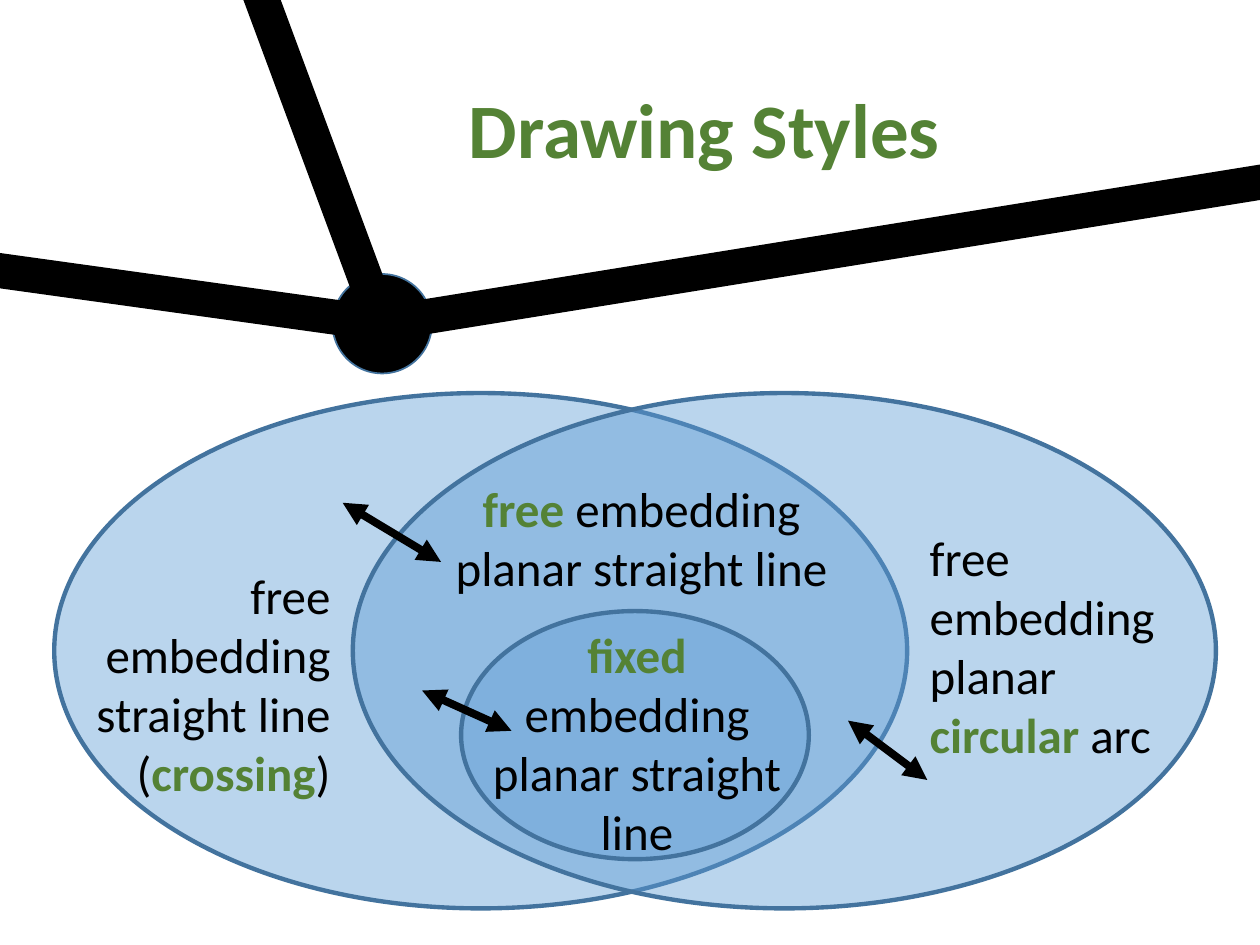
from lxml.etree import SubElement
from pptx import Presentation
from pptx.dml.color import RGBColor
from pptx.enum.shapes import MSO_CONNECTOR, MSO_SHAPE
from pptx.enum.text import MSO_AUTO_SIZE, PP_ALIGN
from pptx.oxml.ns import qn
from pptx.util import Pt

BLUE = RGBColor(0x5B, 0x9B, 0xD5)
OUTLINE = RGBColor(0x43, 0x73, 0x9E)
GREEN = RGBColor(0x54, 0x82, 0x35)
BLACK = RGBColor(0, 0, 0)

prs = Presentation()
prs.slide_width, prs.slide_height = Pt(720), Pt(540)
s = prs.slides.add_slide(prs.slide_layouts[6])


def add_ellipse(box, color, line_width, opacity=100):
    sp = s.shapes.add_shape(MSO_SHAPE.OVAL, *map(Pt, box))
    sp.shadow.inherit = False
    sp.fill.solid()
    sp.fill.fore_color.rgb = color
    sp.line.color.rgb = OUTLINE
    sp.line.width = Pt(line_width)
    if opacity < 100:
        clr = sp.fill._xPr.find(qn("a:solidFill"))[0]
        SubElement(clr, qn("a:alpha"), val=str(opacity * 1000))


def add_line(start, end, width, arrows=False):
    cx = s.shapes.add_connector(MSO_CONNECTOR.STRAIGHT, *map(Pt, start + end))
    cx.line.color.rgb = BLACK
    cx.line.width = Pt(width)
    if arrows:
        ln = cx.line._get_or_add_ln()
        for tag in ("a:headEnd", "a:tailEnd"):
            SubElement(ln, qn(tag), type="triangle")
    SubElement(cx._element.spPr, qn("a:effectLst"))


# Overlapping sets
add_ellipse((31, 224.6, 487.4, 294.5), BLUE, 2.5, 42)
add_ellipse((201.6, 224.6, 493.2, 294.5), BLUE, 2.5, 42)
add_ellipse((263.5, 349.2, 198.7, 141.8), BLUE, 2.5, 34)

# Graph node with three edges
node, radius = (218.4, 185), 28.4
add_ellipse((node[0] - radius, node[1] - radius, 2 * radius, 2 * radius), BLACK, 1)
for end in [(-25.2, 151.2), (745.2, 100.1), (144.7, -13.7)]:
    add_line(node, end, 20)

# Title and set labels: box, size, alignment, wrap, paragraphs of (text, highlighted)
labels = [
    ((257.8, 43.2, 286.6, 60.5), 44, PP_ALIGN.RIGHT, False,
     [[("Drawing Styles", True)]]),
    ((252, 270, 229, 74.9), 28, PP_ALIGN.CENTER, False,
     [[("free", True), (" embedding", False)], [("planar straight line", False)]]),
    ((524.2, 298.1, 172.8, 143.3), 28, PP_ALIGN.LEFT, True,
     [[("free embedding", False)],
      [("planar ", False), ("circular", True), (" arc", False)]]),
    ((269.3, 353.5, 189.4, 143.3), 28, PP_ALIGN.CENTER, True,
     [[("fixed", True), (" embedding", False)], [("planar straight line", False)]]),
    ((42.5, 319.7, 153.4, 143.3), 28, PP_ALIGN.RIGHT, True,
     [[("free embedding", False)],
      [("straight line (", False), ("crossing", True), (")", False)]]),
]
for box, size, align, wrap, paragraphs in labels:
    tf = s.shapes.add_textbox(*map(Pt, box)).text_frame
    tf.word_wrap = wrap
    tf.auto_size = MSO_AUTO_SIZE.SHAPE_TO_FIT_TEXT
    for i, runs in enumerate(paragraphs):
        p = tf.add_paragraph() if i else tf.paragraphs[0]
        p.alignment = align
        for text, highlighted in runs:
            r = p.add_run()
            r.text = text
            r.font.name = "Calibri"
            r.font.size = Pt(size)
            r.font.bold = highlighted
            r.font.color.rgb = GREEN if highlighted else BLACK

# Double arrows between neighbouring sets
for start, end in [((195.8, 287.3), (252, 321.1)),
                   ((484.6, 411.8), (529.9, 445.7)),
                   ((241.2, 394.6), (292.3, 417.6))]:
    add_line(start, end, 4.5, arrows=True)

prs.save("out.pptx")
